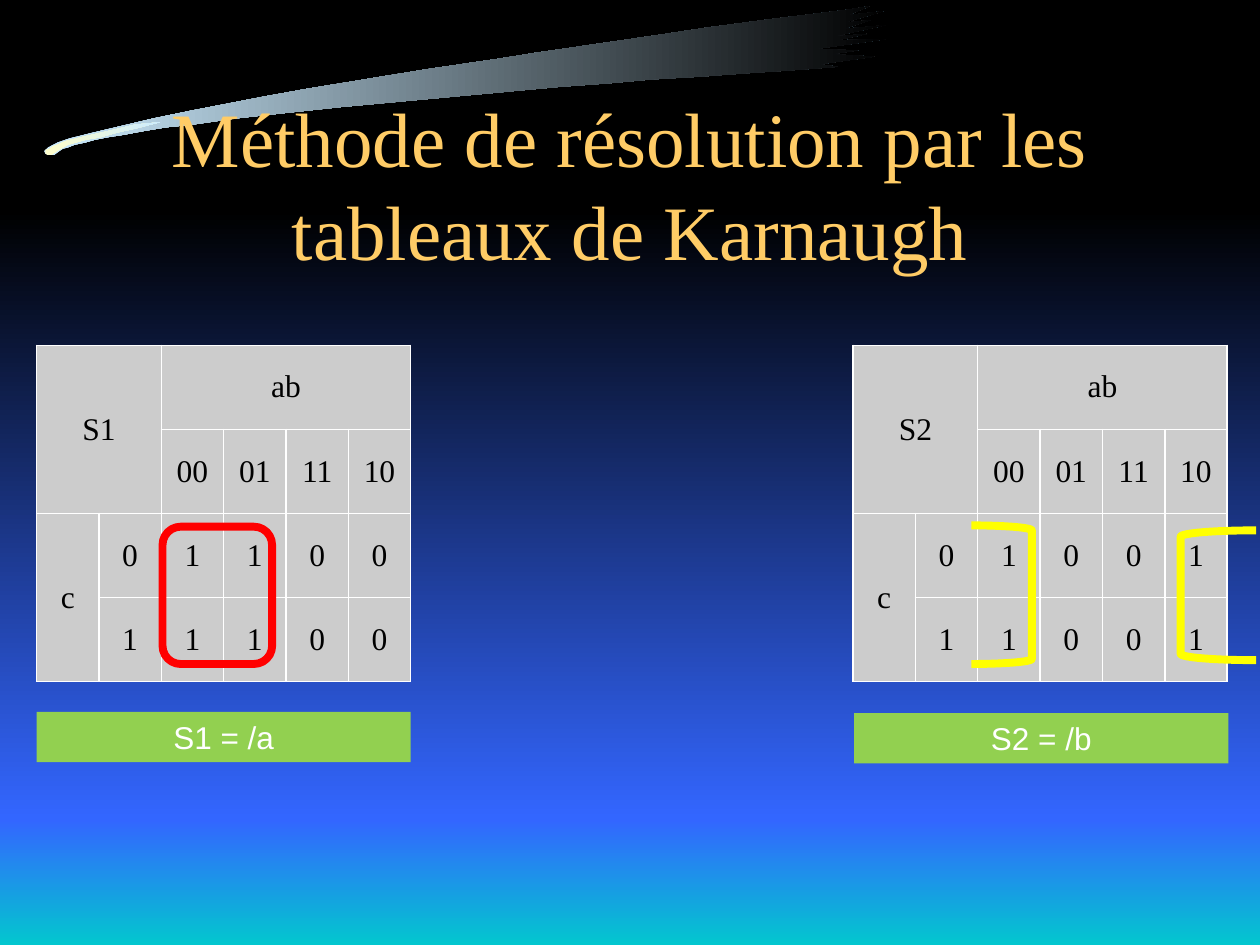
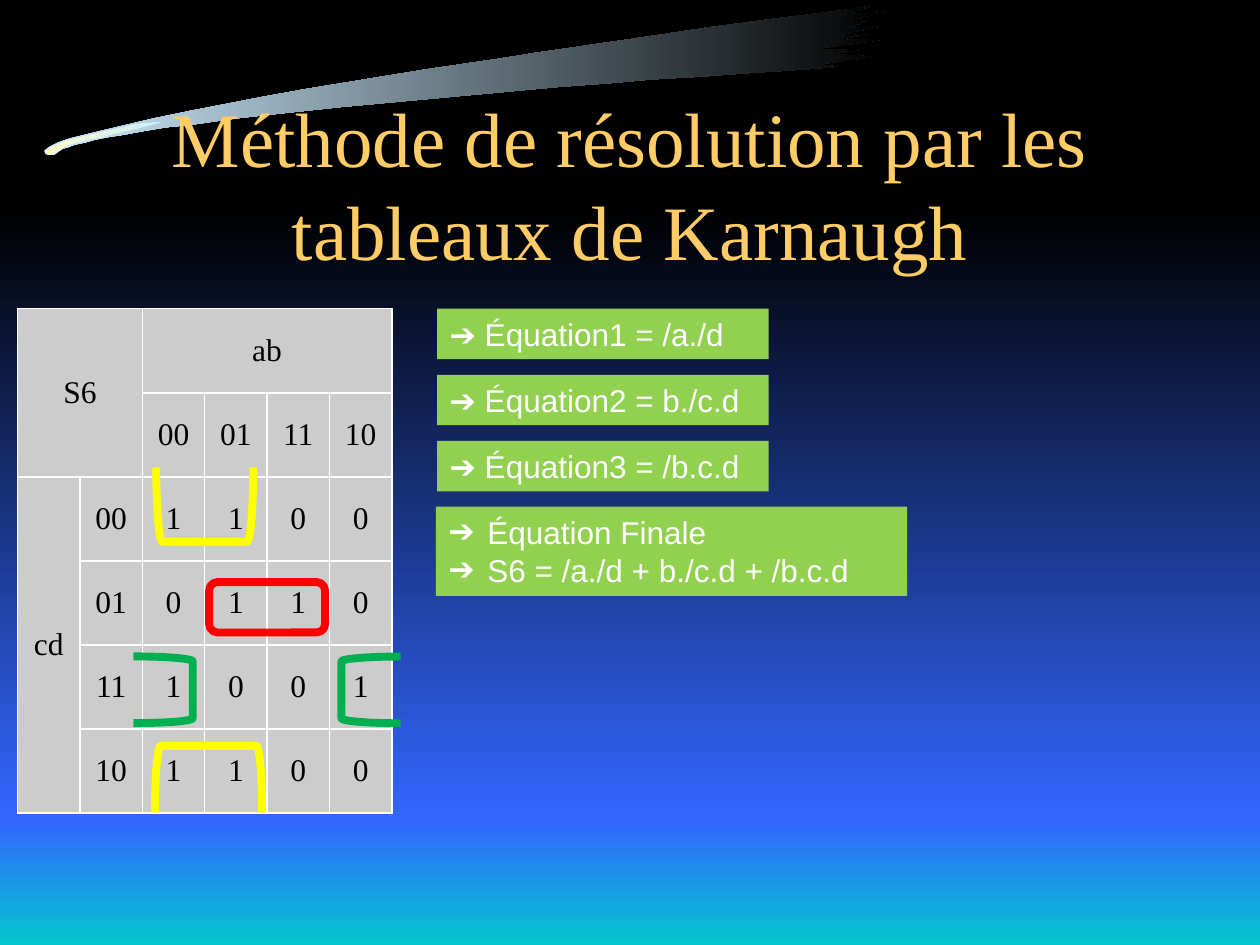
from lxml import etree
from pptx import Presentation
from pptx.dml.color import RGBColor
from pptx.enum.shapes import MSO_SHAPE
from pptx.enum.text import MSO_ANCHOR, MSO_AUTO_SIZE, PP_ALIGN
from pptx.oxml.ns import qn
from pptx.util import Inches, Pt

RECTANGLE = MSO_SHAPE.RECTANGLE
ROUNDED = MSO_SHAPE.ROUNDED_RECTANGLE
LEFT_BRACKET = MSO_SHAPE.LEFT_BRACKET
RIGHT_BRACKET = MSO_SHAPE.RIGHT_BRACKET
TOP, MIDDLE = MSO_ANCHOR.TOP, MSO_ANCHOR.MIDDLE
LEFT, CENTER = PP_ALIGN.LEFT, PP_ALIGN.CENTER
NO_FIT, GROW = MSO_AUTO_SIZE.NONE, MSO_AUTO_SIZE.SHAPE_TO_FIT_TEXT

BLACK = RGBColor(0x00, 0x00, 0x00)
WHITE = RGBColor(0xFF, 0xFF, 0xFF)
BLUE = RGBColor(0x33, 0x66, 0xFF)
TURQUOISE = RGBColor(0x00, 0xCC, 0xCC)
PALE_BLUE = RGBColor(0xCC, 0xEC, 0xFF)
CREAM = RGBColor(0xFF, 0xFF, 0xCC)
GOLD = RGBColor(0xFF, 0xCC, 0x66)
GREY = RGBColor(0xCC, 0xCC, 0xCC)
LIME = RGBColor(0x92, 0xD0, 0x50)
RED = RGBColor(0xFF, 0x00, 0x00)
YELLOW = RGBColor(0xFF, 0xFF, 0x00)
GREEN = RGBColor(0x00, 0xB0, 0x50)

TITLE = "Méthode de résolution par les tableaux de Karnaugh"
TITLE_FONT = {"name": "Times New Roman", "size": Pt(44)}
MAP_FONT = {"name": "Times New Roman", "size": Pt(18)}
EQUATION_FONT = {"name": "Arial", "size": Pt(18)}
TITLE_FRAME = {"vertical_anchor": MIDDLE, "word_wrap": True, "auto_size": NO_FIT}
EQUATION_FRAME = {"vertical_anchor": TOP, "word_wrap": True, "auto_size": GROW}
CELL_FORMAT = {
    "vertical_anchor": MIDDLE,
    "margin_left": Inches(0.07),
    "margin_right": Inches(0.07),
    "margin_top": 0,
    "margin_bottom": 0,
}

GRAY_CODES = ("00", "01", "11", "10")
COLUMN_COUNT = 6
COLUMN_WIDTH = Inches(2.97) // COLUMN_COUNT
ROW_HEIGHT = Inches(2.67) // 4
EQUATION_HEIGHT = 0.4

BRUSH_STROKE = (
    (6.65, 0.53), (6.5, 0.51), (6.94, 0.45), (6.6, 0.43), (6.81, 0.4),
    (6.47, 0.39), (7.03, 0.31), (6.64, 0.32), (6.88, 0.27), (6.61, 0.29),
    (7.03, 0.2), (6.69, 0.23), (6.91, 0.16), (6.7, 0.18), (7.01, 0.09),
    (6.73, 0.12), (6.9, 0.05), (6.71, 0.08), (6.47, 0.11), (6.14, 0.15),
    (5.61, 0.22), (5.28, 0.27), (4.94, 0.32), (4.25, 0.42), (3.94, 0.47),
    (3.73, 0.5), (3.39, 0.55), (2.96, 0.62), (2.41, 0.71), (2.08, 0.77),
    (1.51, 0.88), (1.22, 0.94), (0.71, 1.06), (0.55, 1.1), (0.46, 1.13),
    (0.38, 1.17), (0.36, 1.19), (0.35, 1.2), (0.36, 1.22), (0.38, 1.23),
    (0.43, 1.23), (0.47, 1.2), (0.5, 1.18), (0.54, 1.17), (0.59, 1.15),
    (0.68, 1.13), (0.75, 1.11), (0.85, 1.09), (0.98, 1.07), (1.14, 1.04),
    (1.32, 1.01), (1.52, 0.99), (1.87, 0.94), (2.14, 0.91), (2.7, 0.85),
    (3.35, 0.79), (3.89, 0.74), (4.43, 0.69), (4.84, 0.66), (5.17, 0.63),
    (5.53, 0.61), (5.94, 0.58), (6.25, 0.56),
)
BRUSH_TIP = (
    (0.36, 1.19), (0.39, 1.18), (0.42, 1.16), (0.45, 1.15), (0.52, 1.12),
    (0.64, 1.09), (0.86, 1.04), (1.07, 0.99), (1.27, 0.97), (1.08, 1.02),
    (0.94, 1.05), (0.8, 1.09), (0.68, 1.11), (0.54, 1.15), (0.47, 1.19),
    (0.44, 1.21), (0.41, 1.23), (0.38, 1.23), (0.36, 1.22), (0.36, 1.21),
)


def set_attributes(target, values):
    for name, value in values.items():
        setattr(target, name, value)


def format_paragraph(paragraph, alignment, font_format, color):
    paragraph.alignment = alignment
    set_attributes(paragraph.font, font_format)
    paragraph.font.color.rgb = color


def add_preset(slide, preset, left, top, width, height):
    shape = slide.shapes.add_shape(
        preset, Inches(left), Inches(top), Inches(width), Inches(height))
    shape.shadow.inherit = False
    return shape


def add_outline(slide, points):
    corners = [(Inches(x), Inches(y)) for x, y in points]
    builder = slide.shapes.build_freeform(*corners[0])
    builder.add_line_segments(corners[1:], close=True)
    shape = builder.convert_to_shape()
    shape.shadow.inherit = False
    return shape


def fill_gradient(shape, first, last, angle):
    """Blend two colours; the angle runs counter-clockwise."""
    shape.line.fill.background()
    shape.fill.gradient()
    shape.fill.gradient_angle = angle
    for stop, color in zip(shape.fill.gradient_stops, (first, last)):
        stop.color.rgb = color


def decorate_layout(layout, slide):
    """Draw the backdrop on a slide, then move it to the layout all slides share."""
    layout.background.fill.solid()
    layout.background.fill.fore_color.rgb = BLACK
    backdrop = (
        (add_preset(slide, RECTANGLE, -0.01, 1.67, 10.07, 4.83), BLACK, BLUE, 270),
        (add_preset(slide, RECTANGLE, -0.01, 6.5, 10.07, 1.06), BLUE, TURQUOISE, 270),
        (add_outline(slide, BRUSH_STROKE), PALE_BLUE, BLACK, 0),
        (add_outline(slide, BRUSH_TIP), CREAM, PALE_BLUE, 0),
    )
    first_placeholder = layout.placeholders[0].element
    for shape, first, last, angle in backdrop:
        fill_gradient(shape, first, last, angle)
        first_placeholder.addprevious(shape.element)


def add_title(slide):
    title = slide.shapes.title
    set_attributes(title, {"left": Inches(0.75), "top": Inches(0.83),
                           "width": Inches(8.5), "height": Inches(1.25)})
    title.text_frame.text = TITLE
    set_attributes(title.text_frame, TITLE_FRAME)
    format_paragraph(title.text_frame.paragraphs[0], CENTER, TITLE_FONT, GOLD)


def add_bullet(paragraph, character):
    properties = paragraph._p.get_or_add_pPr()
    indent = Inches(0.31)
    properties.set("marL", str(indent))
    properties.set("indent", str(-indent))
    etree.SubElement(properties, qn("a:buFont")).set("typeface", "Arial")
    etree.SubElement(properties, qn("a:buChar")).set("char", character)


def add_equation(slide, left, top, width, lines, alignment=LEFT,
                 height=EQUATION_HEIGHT, bullet=None):
    box = add_preset(slide, RECTANGLE, left, top, width, height)
    box.fill.solid()
    box.fill.fore_color.rgb = LIME
    box.line.fill.background()
    box.text_frame.text = "\n".join(lines)
    set_attributes(box.text_frame, EQUATION_FRAME)
    for paragraph in box.text_frame.paragraphs:
        if bullet:
            add_bullet(paragraph, bullet)
        format_paragraph(paragraph, alignment, EQUATION_FONT, WHITE)


def add_loop(slide, preset, color, left, top, width, height, rotation=0):
    """Circle a group of ones on a map."""
    loop = add_preset(slide, preset, left, top, width, height)
    loop.fill.background()
    loop.line.color.rgb = color
    loop.line.width = Pt(4.5)
    loop.rotation = rotation


def add_borders(cell):
    properties = cell._tc.get_or_add_tcPr()
    for side in ("a:lnL", "a:lnR", "a:lnT", "a:lnB"):
        line = etree.SubElement(properties, qn(side), w=str(Pt(1)))
        fill = etree.SubElement(line, qn("a:solidFill"))
        etree.SubElement(fill, qn("a:srgbClr"), val=str(WHITE))


def format_cell(cell):
    add_borders(cell)
    cell.fill.solid()
    cell.fill.fore_color.rgb = GREY
    set_attributes(cell, CELL_FORMAT)
    format_paragraph(cell.text_frame.paragraphs[0], CENTER, MAP_FONT, BLACK)


def add_karnaugh_map(slide, left, top, output, variable, values):
    """Draw a map whose values pair each row code with its four digits."""
    rows = [
        (output, "", "ab", "", "", ""),
        ("", "", *GRAY_CODES),
        *(("", code, *digits) for code, digits in values.items()),
    ]
    table = slide.shapes.add_table(
        len(rows), COLUMN_COUNT, Inches(left), Inches(top),
        COLUMN_WIDTH * COLUMN_COUNT, ROW_HEIGHT * len(rows)).table
    set_attributes(table, {"first_row": False, "horz_banding": False})
    for column in table.columns:
        column.width = COLUMN_WIDTH
    for row_index, texts in enumerate(rows):
        table.rows[row_index].height = ROW_HEIGHT
        for column_index, text in enumerate(texts):
            cell = table.cell(row_index, column_index)
            cell.text = text
            format_cell(cell)
    variable_cell = table.cell(2, 0)
    variable_cell.text_frame.paragraphs[0].text = variable
    variable_cell.merge(table.cell(len(rows) - 1, 0))
    table.cell(0, 0).merge(table.cell(1, 1))
    table.cell(0, 2).merge(table.cell(0, 5))


def fill_two_maps_slide(slide):
    add_title(slide)
    add_equation(slide, 0.29, 5.65, 2.97, ["S1 = /a"], CENTER)
    add_karnaugh_map(slide, 0.29, 2.74, "S1", "c", {"0": "1100", "1": "1100"})
    add_loop(slide, ROUNDED, RED, 1.29, 4.18, 0.87, 1.09)
    add_karnaugh_map(slide, 6.77, 2.74, "S2", "c", {"0": "1001", "1": "1001"})
    add_loop(slide, LEFT_BRACKET, YELLOW, 9.37, 4.21, 0.6, 1.03)
    add_loop(slide, RIGHT_BRACKET, YELLOW, 7.71, 4.17, 0.48, 1.1)
    add_equation(slide, 6.78, 5.66, 2.97, ["S2 = /b"], CENTER)


def fill_four_variables_slide(slide):
    add_title(slide)
    for index, terms in enumerate(("/a./d", "b./c.d", "/b.c.d")):
        add_equation(slide, 3.47, 2.45 + 0.525 * index, 2.63,
                     [f"➔ Équation{index + 1} = {terms}"])
    add_equation(slide, 3.46, 4.02, 3.74,
                 ["Équation Finale", "S6 = /a./d + b./c.d + /b.c.d"],
                 height=0.71, bullet="➔")
    digits = ("1100", "0110", "1001", "1100")
    add_karnaugh_map(slide, 0.14, 2.45, "S6", "cd", dict(zip(GRAY_CODES, digits)))
    add_loop(slide, ROUNDED, RED, 1.66, 4.62, 0.92, 0.4)
    add_loop(slide, LEFT_BRACKET, YELLOW, 1.39, 5.76, 0.53, 0.85, 90)
    add_loop(slide, RIGHT_BRACKET, YELLOW, 1.33, 3.62, 0.59, 0.77, 90)
    add_loop(slide, RIGHT_BRACKET, GREEN, 2.71, 5.21, 0.47, 0.53, 180)
    add_loop(slide, RIGHT_BRACKET, GREEN, 1.06, 5.21, 0.47, 0.53)


def main():
    presentation = Presentation()
    presentation.slide_width = Inches(10)
    presentation.slide_height = Inches(7.5)
    title_only = presentation.slide_layouts[5]
    slides = [presentation.slides.add_slide(title_only) for _ in range(2)]
    decorate_layout(title_only, slides[0])
    fill_two_maps_slide(slides[0])
    fill_four_variables_slide(slides[1])
    presentation.save("out.pptx")


if __name__ == "__main__":
    main()
